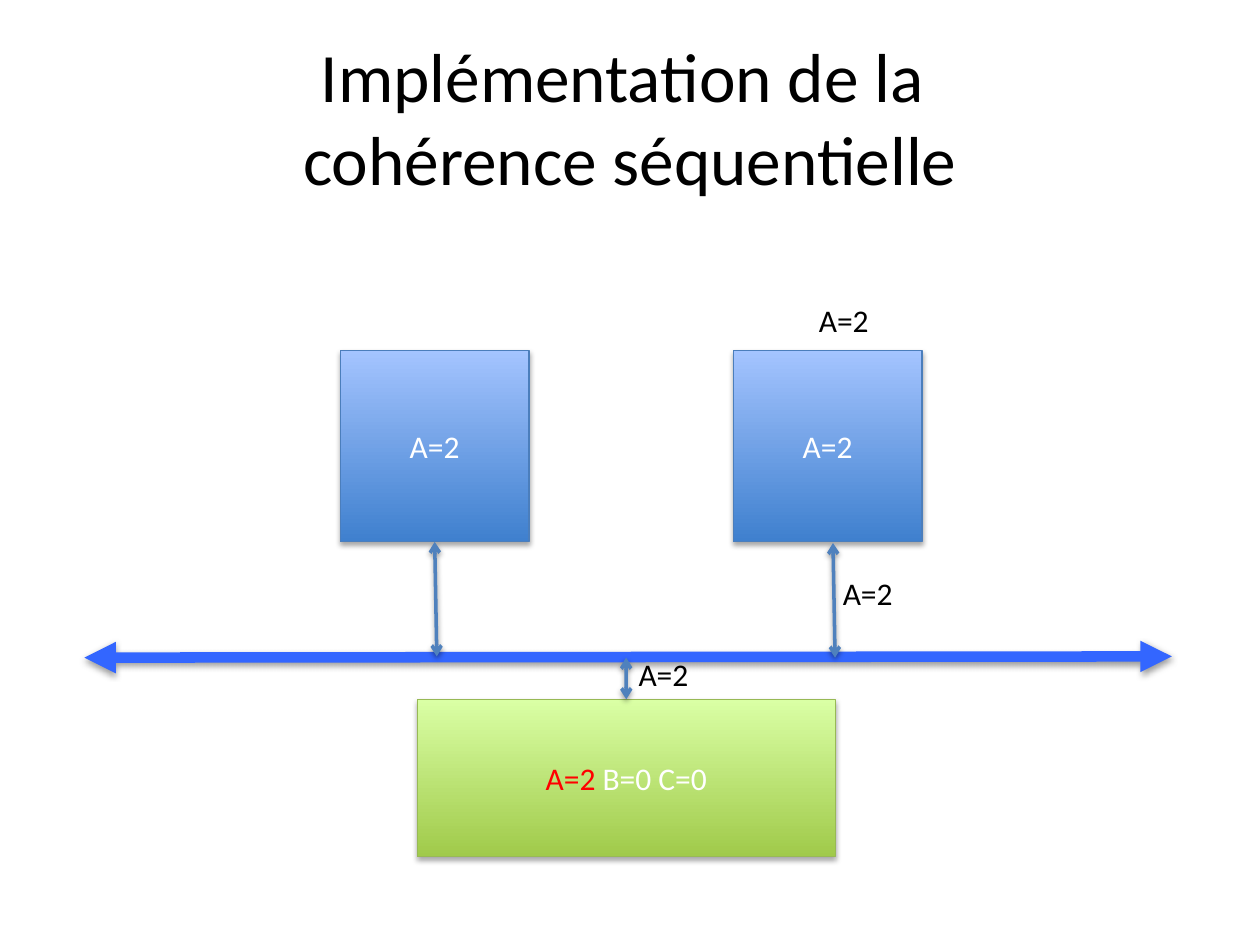
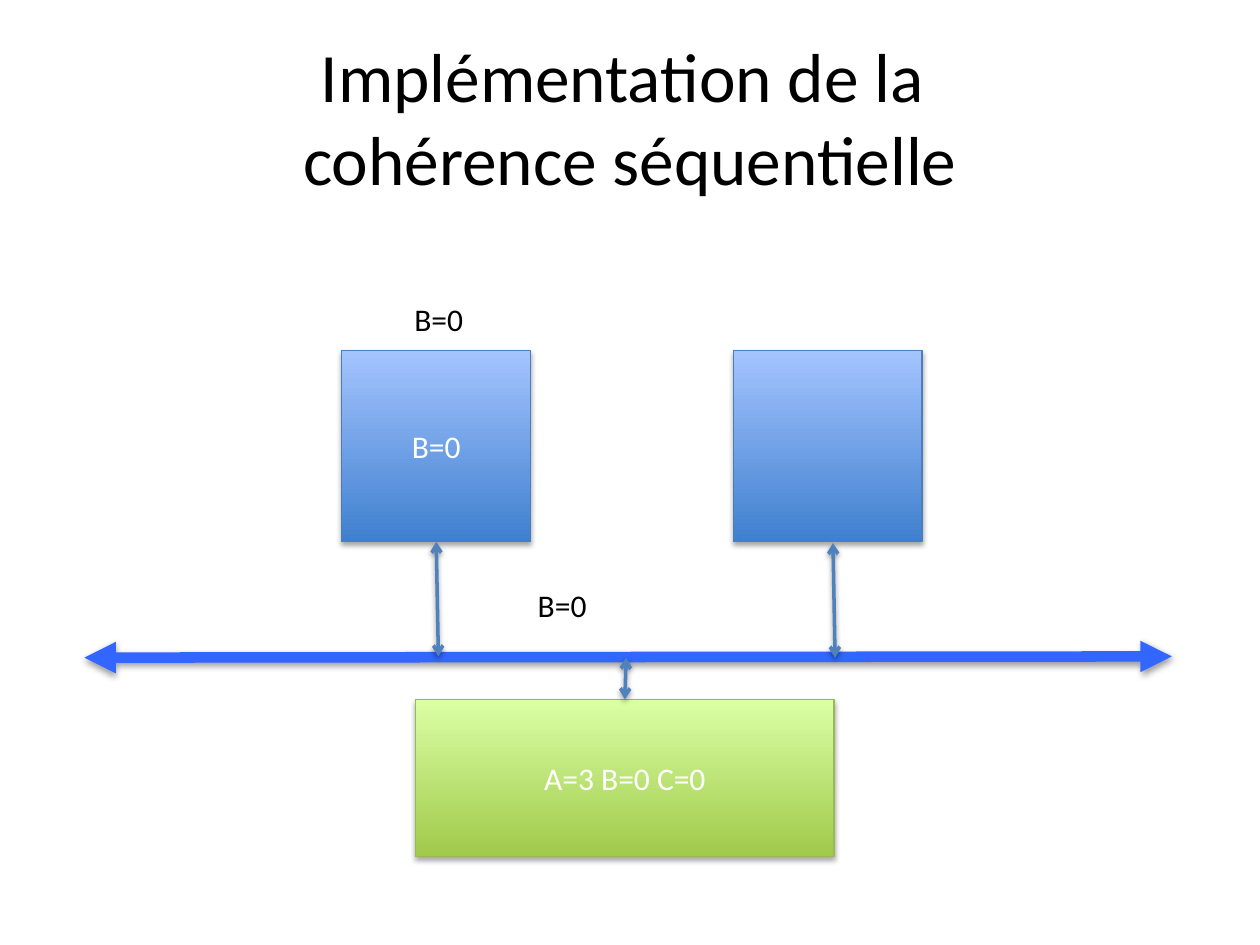
from lxml import etree
from pptx import Presentation
from pptx.dml.color import RGBColor
from pptx.enum.shapes import MSO_CONNECTOR, MSO_SHAPE
from pptx.enum.text import MSO_ANCHOR, MSO_AUTO_SIZE, PP_ALIGN
from pptx.oxml.ns import qn
from pptx.util import Pt

RECT, LINE = MSO_SHAPE.RECTANGLE, MSO_CONNECTOR.STRAIGHT
MID, CENTER = MSO_ANCHOR.MIDDLE, PP_ALIGN.CENTER
GROW = MSO_AUTO_SIZE.SHAPE_TO_FIT_TEXT
TOP, BOTTOM = 0, 2

# Content: runs are (text, colour); labels are (text, left, top)
WHITE, RED, BLACK = "FFFFFF", "FF0000", "000000"
TITLE = ("Implémentation de la ", "cohérence séquentielle")
SLIDES = [
    {
        "caches": ["A=2", "A=2"],
        "left": 194.4,
        "memory": [("A=2", RED), (" B=0 C=0", WHITE)],
        "store": 238.4,
        "labels": [("A=2", 357.8, 370.8), ("A=2", 460.8, 168.5),
                   ("A=2", 474.5, 324.7)],
    },
    {
        "caches": ["B=0", ""],
        "left": 195.3,
        "memory": [("A=3 B=0 C=0", WHITE)],
        "store": 237.6,
        "labels": [("B=0", 229.7, 167.8), ("B=0", 300.2, 331.2)],
    },
]

# Shared look: bottom colour, top colour, outline
BLUE = ("3F80CE", "A4C4FF", "4B7EBC")
GREEN = ("A0CA4A", "DAFFA5", "98B955")
BUS, LINK = ("3366FF", 6, "triangle"), ("4F81BD", 2, "arrow")
FONT = "Calibri"
RIGHT, CACHE_Y, CACHE_W, CACHE_H = 419, 200.2, 108, 109.4
STORE_Y, STORE_W, STORE_H = 399.6, 239, 90
BUS_Y = 375.8


def rgb(code):
    return RGBColor.from_string(code)


def style(run, size, color):
    for key, value in {"name": FONT, "size": Pt(size)}.items():
        setattr(run.font, key, value)
    run.font.color.rgb = rgb(color)


def shade(part, dist, alpha):
    effects = etree.SubElement(part._element.spPr, qn("a:effectLst"))
    outer = etree.SubElement(effects, qn("a:outerShdw"), blurRad=str(Pt(3.1)),
                             dist=str(Pt(dist)), dir="5400000", rotWithShape="0")
    color = etree.SubElement(outer, qn("a:srgbClr"), val=BLACK)
    etree.SubElement(color, qn("a:alpha"), val=str(alpha * 1000))


def add_box(slide, x, y, w, h, look, runs):
    box = slide.shapes.add_shape(RECT, Pt(x), Pt(y), Pt(w), Pt(h))
    box.fill.gradient()
    box.fill.gradient_angle = 90
    for stop, color in zip(box.fill.gradient_stops, look):
        stop.color.rgb = rgb(color)
    box.line.color.rgb = rgb(look[2])
    box.line.width = Pt(0.75)
    shade(box, 1.8, 35)
    box.text_frame.vertical_anchor = MID
    para = box.text_frame.paragraphs[0]
    para.alignment = CENTER
    for text, color in runs:
        if text:
            run = para.add_run()
            run.text = text
            style(run, 18, color)
    return box


def add_arrow(slide, start, end, look):
    color, width, head = look
    arrow = slide.shapes.add_connector(LINE, *map(Pt, start + end))
    arrow.line.color.rgb = rgb(color)
    arrow.line.width = Pt(width)
    for tag in ("a:headEnd", "a:tailEnd"):
        etree.SubElement(arrow.line._ln, qn(tag), type=head)
    shade(arrow, 1.6, 38)
    return arrow


def add_label(slide, text, x, y):
    frame = slide.shapes.add_textbox(Pt(x), Pt(y), Pt(43), Pt(29)).text_frame
    frame.word_wrap = False
    frame.auto_size = GROW
    run = frame.paragraphs[0].add_run()
    run.text = text
    style(run, 18, BLACK)


def add_title(slide):
    title = slide.shapes.title
    place = {"left": 36, "top": 21.6, "width": 648, "height": 90}
    for key, value in place.items():
        setattr(title, key, Pt(value))
    title.text_frame.vertical_anchor = MID
    para = title.text_frame.paragraphs[0]
    para.alignment = CENTER
    for i, text in enumerate(TITLE):
        if i:
            para.add_line_break()
        run = para.add_run()
        run.text = text
        style(run, 39.6, BLACK)


def build(deck, data):
    slide = deck.slides.add_slide(deck.slide_layouts[5])
    add_title(slide)
    add_arrow(slide, (48.2, BUS_Y), (669.6, BUS_Y - 0.7), BUS)

    # Caches above the bus, memory below
    caches = [add_box(slide, x, CACHE_Y, CACHE_W, CACHE_H, BLUE, [(text, WHITE)])
              for x, text in zip((data["left"], RIGHT), data["caches"])]
    memory = add_box(slide, data["store"], STORE_Y, STORE_W, STORE_H, GREEN,
                     data["memory"])

    # Links to the bus
    link = add_arrow(slide, (357.8, BUS_Y), (357.8, STORE_Y), LINK)
    link.end_connect(memory, TOP)
    mid, low = data["left"] + CACHE_W / 2, CACHE_Y + CACHE_H
    link = add_arrow(slide, (mid, low), (mid + 1.2, BUS_Y - 0.7), LINK)
    link.begin_connect(caches[0], BOTTOM)
    add_arrow(slide, (476, low + 0.7), (477.2, BUS_Y), LINK)

    for label in data["labels"]:
        add_label(slide, *label)


def main():
    deck = Presentation()
    deck.slide_width, deck.slide_height = Pt(720), Pt(540)
    for data in SLIDES:
        build(deck, data)
    deck.save("out.pptx")


if __name__ == "__main__":
    main()
